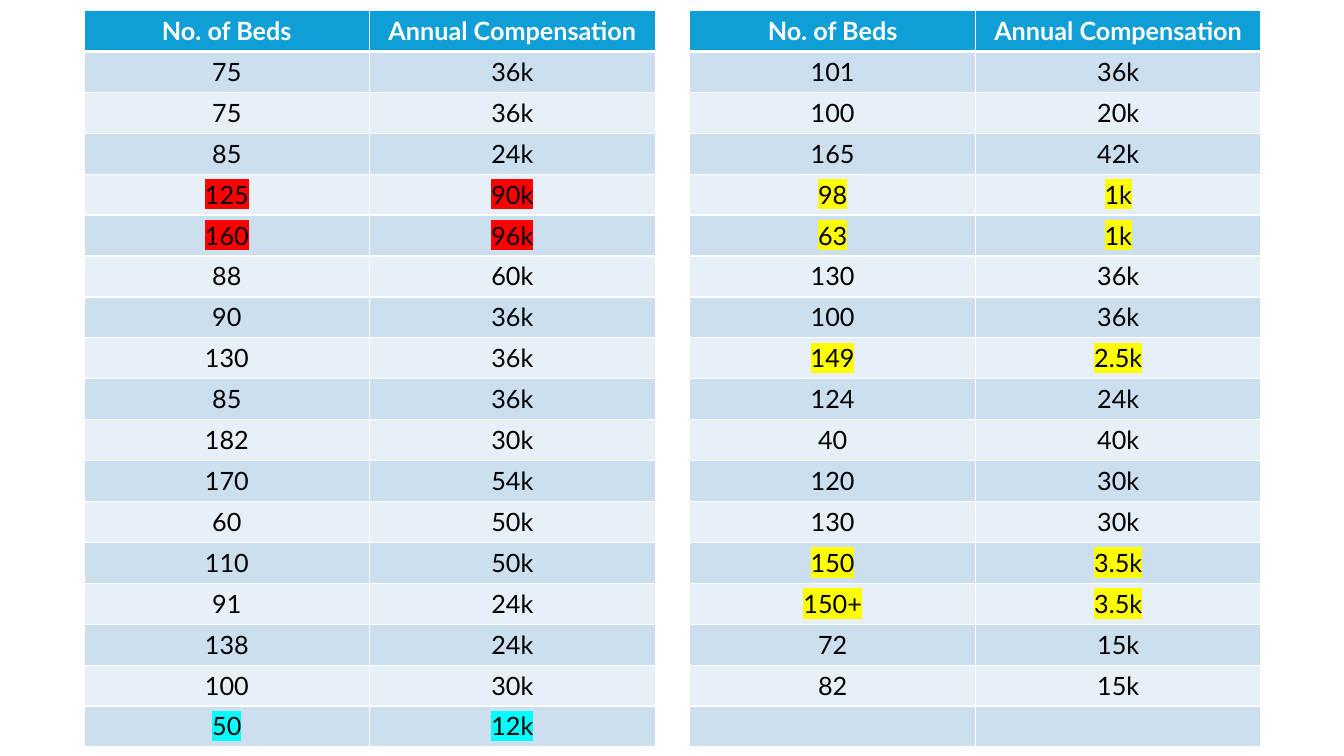
from dataclasses import dataclass

from lxml.etree import SubElement
from pptx import Presentation
from pptx.dml.color import RGBColor
from pptx.enum.text import MSO_ANCHOR, PP_ALIGN
from pptx.oxml.ns import qn
from pptx.util import Pt

PX = 9525  # EMU per px, 96 px to the inch


@dataclass(frozen=True)
class Theme:
    font: str = "Lato"
    size: int = 18
    header_fill: str = "0F9ED5"
    header_text: str = "FFFFFF"
    text: str = "000000"
    bands: tuple = ("CCDFEF", "E7F0F7")
    border: str = "FFFFFF"
    thin: int = 1
    thick: int = 3
    high: str = "FF0000"
    low: str = "FFFF00"
    small: str = "00FFFF"


THEME = Theme()
HEADER = ("No. of Beds", "Annual Compensation")
LEFT_ROWS = [
    ("75", "36k"), ("75", "36k"), ("85", "24k"),
    ("125", "90k", THEME.high), ("160", "96k", THEME.high),
    ("88", "60k"), ("90", "36k"), ("130", "36k"), ("85", "36k"),
    ("182", "30k"), ("170", "54k"), ("60", "50k"), ("110", "50k"),
    ("91", "24k"), ("138", "24k"), ("100", "30k"),
    ("50", "12k", THEME.small),
]
RIGHT_ROWS = [
    ("101", "36k"), ("100", "20k"), ("165", "42k"),
    ("98", "1k", THEME.low), ("63", "1k", THEME.low),
    ("130", "36k"), ("100", "36k"), ("149", "2.5k", THEME.low),
    ("124", "24k"), ("40", "40k"), ("120", "30k"), ("130", "30k"),
    ("150", "3.5k", THEME.low), ("150+", "3.5k", THEME.low),
    ("72", "15k"), ("82", "15k"), ("", ""),
]


class SlideBuilder:
    def __init__(self, slide, theme):
        self.slide = slide
        self.theme = theme

    def table(self, x, y, col_w, row_h, header, rows):
        """Each row holds its texts, then optionally a highlight colour."""
        n_rows, n_cols = len(rows) + 1, len(header)
        frame = self.slide.shapes.add_table(
            n_rows, n_cols, x * PX, y * PX,
            n_cols * col_w * PX, n_rows * row_h * PX)
        table = frame.table
        for col in table.columns:
            col.width = col_w * PX
        for i, values in enumerate([header, *rows]):
            table.rows[i].height = row_h * PX
            highlight = values[n_cols] if len(values) > n_cols else None
            for j in range(n_cols):
                self.cell(table.cell(i, j), i, values[j], highlight)

    def cell(self, cell, row, text, highlight):
        t = self.theme
        is_header = row == 0
        self.borders(cell, top=t.thick if row == 1 else t.thin,
                     bottom=t.thick if is_header else t.thin)
        fill = t.header_fill if is_header else t.bands[(row - 1) % 2]
        cell.fill.solid()
        cell.fill.fore_color.rgb = RGBColor.from_string(fill)
        cell.vertical_anchor = MSO_ANCHOR.TOP
        p = cell.text_frame.paragraphs[0]
        p.alignment = PP_ALIGN.CENTER
        p.font.name = t.font
        p.font.size = Pt(t.size)
        p.font.bold = is_header
        p.font.color.rgb = RGBColor.from_string(
            t.header_text if is_header else t.text)
        if text:
            r = p.add_run()
            r.text = text
            if highlight:
                mark = SubElement(r._r.get_or_add_rPr(), qn("a:highlight"))
                SubElement(mark, qn("a:srgbClr"), val=highlight)

    def borders(self, cell, top, bottom):
        thin = self.theme.thin
        tc_pr = cell._tc.get_or_add_tcPr()
        for side, width in zip("LRTB", (thin, thin, top, bottom)):
            ln = SubElement(tc_pr, qn(f"a:ln{side}"), w=str(Pt(width)))
            fill = SubElement(ln, qn("a:solidFill"))
            SubElement(fill, qn("a:srgbClr"), val=self.theme.border)


def main():
    prs = Presentation()
    prs.slide_width, prs.slide_height = 1280 * PX, 720 * PX
    slide = prs.slides.add_slide(prs.slide_layouts[6])
    builder = SlideBuilder(slide, THEME)
    for x, rows in ((80, LEFT_ROWS), (657, RIGHT_ROWS)):
        builder.table(x, 10, 272, 39, HEADER, rows)
    prs.save("out.pptx")


if __name__ == "__main__":
    main()
